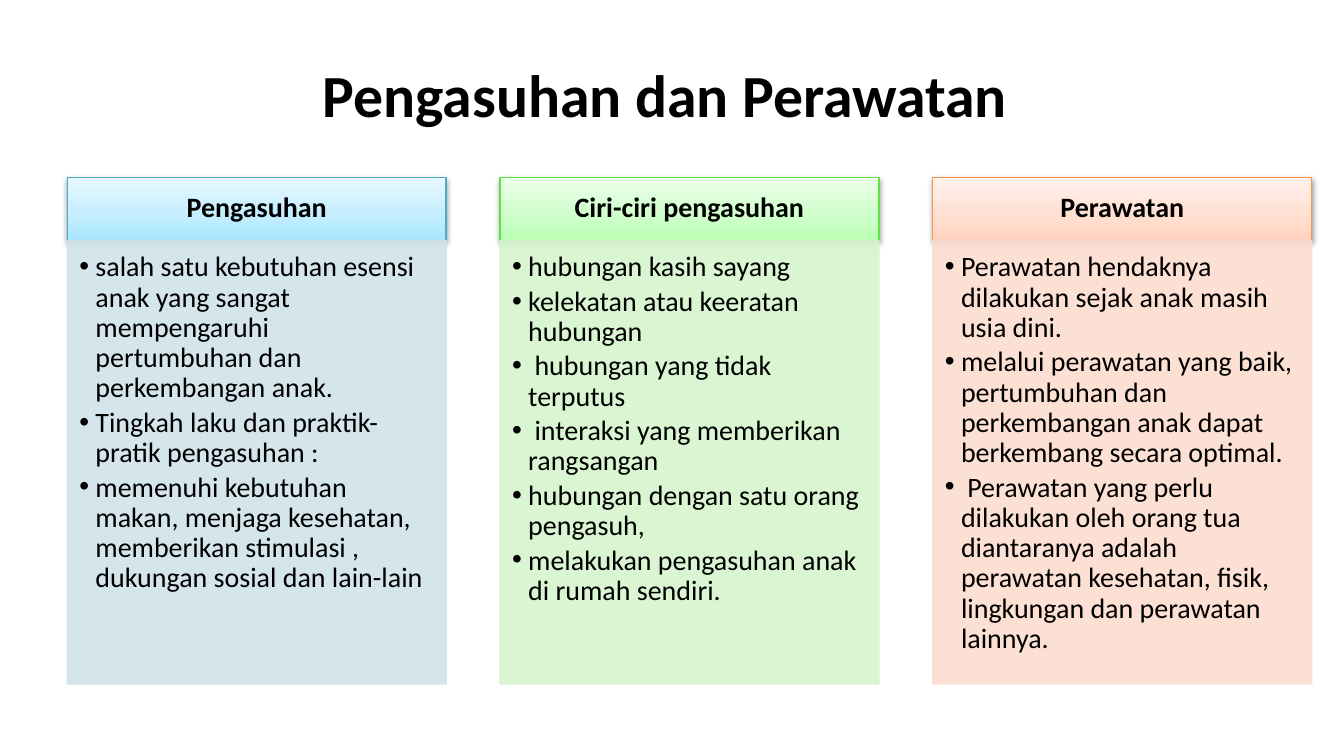
from copy import deepcopy

from lxml.etree import SubElement
from pptx import Presentation
from pptx.dml.color import RGBColor
from pptx.enum.shapes import MSO_SHAPE
from pptx.enum.text import MSO_ANCHOR, PP_ALIGN
from pptx.oxml.ns import qn
from pptx.util import Inches, Pt

BLACK = RGBColor(0x00, 0x00, 0x00)
BLUE_LINE = RGBColor(0x4B, 0xAC, 0xC6)
BLUE_BODY = RGBColor(0xD0, 0xE3, 0xEA)
BLUE_STOPS = [RGBColor(0xA7, 0xE6, 0xFF), RGBColor(0xC1, 0xED, 0xFF), RGBColor(0xE7, 0xF8, 0xFF)]
GREEN_LINE = RGBColor(0x60, 0xE1, 0x46)
GREEN_BODY = RGBColor(0xD6, 0xF4, 0xCE)
GREEN_STOPS = [RGBColor(0xB9, 0xFF, 0xB2), RGBColor(0xCD, 0xFF, 0xC9), RGBColor(0xEC, 0xFF, 0xEA)]
ORANGE_LINE = RGBColor(0xF7, 0x96, 0x46)
ORANGE_BODY = RGBColor(0xFC, 0xDD, 0xCF)
ORANGE_STOPS = [RGBColor(0xFF, 0xD2, 0xBD), RGBColor(0xFF, 0xDE, 0xD0), RGBColor(0xFF, 0xF2, 0xED)]

COLUMNS = [
    ("Pengasuhan", BLUE_LINE, BLUE_BODY, BLUE_STOPS, [
        "salah satu kebutuhan esensi anak yang sangat mempengaruhi pertumbuhan dan perkembangan anak.",
        "Tingkah laku dan praktik-pratik pengasuhan :",
        "memenuhi kebutuhan makan, menjaga kesehatan,  memberikan stimulasi , "
        "dukungan sosial dan lain-lain",
    ]),
    ("Ciri-ciri pengasuhan", GREEN_LINE, GREEN_BODY, GREEN_STOPS, [
        "hubungan kasih sayang",
        "kelekatan atau keeratan hubungan",
        " hubungan yang tidak terputus",
        " interaksi yang memberikan rangsangan",
        "hubungan dengan satu orang pengasuh,",
        "melakukan pengasuhan anak di rumah sendiri.",
    ]),
    ("Perawatan", ORANGE_LINE, ORANGE_BODY, ORANGE_STOPS, [
        "Perawatan hendaknya dilakukan sejak anak masih usia dini.",
        "melalui perawatan yang baik, pertumbuhan dan perkembangan anak dapat "
        "berkembang secara optimal.",
        " Perawatan yang perlu dilakukan oleh orang tua diantaranya adalah "
        "perawatan kesehatan, fisik, lingkungan dan perawatan lainnya.",
    ]),
]
STOP_POSITIONS = [0, 0.35, 1]
LEFT, PITCH, WIDTH = 0.5, 3.22, 2.82
HEADER_TOP, HEADER_HEIGHT, BODY_HEIGHT = 1.32, 0.47, 3.3


def add_panel(left, top, height, line_color, anchor, insets):
    panel = slide.shapes.add_shape(
        MSO_SHAPE.RECTANGLE, Inches(left), Inches(top), Inches(WIDTH), Inches(height))
    panel.shadow.inherit = False
    panel.line.color.rgb = line_color
    panel.line.width = Pt(0.75)
    frame = panel.text_frame
    frame.word_wrap = True
    frame.vertical_anchor = anchor
    frame.margin_left, frame.margin_top, frame.margin_right, frame.margin_bottom = map(Inches, insets)
    return panel


def add_text(paragraph, text, size, bold, align):
    paragraph.alignment = align
    run = paragraph.add_run()
    run.text = text
    run.font.name = "Calibri"
    run.font.size = Pt(size)
    run.font.bold = bold
    run.font.color.rgb = BLACK


prs = Presentation()
prs.slide_width = Inches(10)
prs.slide_height = Inches(10 * 9 / 16)
slide = prs.slides.add_slide(prs.slide_layouts[6])

title = slide.shapes.add_textbox(Inches(0.5), Inches(0.23), Inches(9), Inches(0.94)).text_frame
title.word_wrap = True
title.vertical_anchor = MSO_ANCHOR.MIDDLE
add_text(title.paragraphs[0], "Pengasuhan dan Perawatan ", 32, True, PP_ALIGN.CENTER)

for column, (heading, line_color, body_color, stop_colors, points) in enumerate(COLUMNS):
    left = LEFT + column * PITCH

    header = add_panel(left, HEADER_TOP, HEADER_HEIGHT, line_color,
                       MSO_ANCHOR.MIDDLE, (0.12, 0.07, 0.12, 0.07))
    header.fill.gradient()
    header.fill.gradient_angle = 90
    stop_list = header._element.spPr.find(qn("a:gradFill")).find(qn("a:gsLst"))
    stop_list.append(deepcopy(stop_list[-1]))
    for stop, position, color in zip(header.fill.gradient_stops, STOP_POSITIONS, stop_colors):
        stop.position = position
        stop.color.rgb = color
    shadow = SubElement(header._element.spPr.find(qn("a:effectLst")), qn("a:outerShdw"),
                        blurRad="40000", dist="20000", dir="5400000", rotWithShape="0")
    shadow_color = SubElement(shadow, qn("a:srgbClr"), val="000000")
    SubElement(shadow_color, qn("a:alpha"), val="38000")
    heading_line = header.text_frame.paragraphs[0]
    heading_line.line_spacing = 0.9
    add_text(heading_line, heading, 15, True, PP_ALIGN.CENTER)

    body = add_panel(left, HEADER_TOP + HEADER_HEIGHT, BODY_HEIGHT, body_color,
                     MSO_ANCHOR.TOP, (0.09, 0.09, 0.12, 0.13))
    body.fill.solid()
    body.fill.fore_color.rgb = body_color
    for color in body._element.spPr.iter(qn("a:srgbClr")):
        SubElement(color, qn("a:alpha"), val="90000")
    for index, point in enumerate(points):
        frame = body.text_frame
        paragraph = frame.add_paragraph() if index else frame.paragraphs[0]
        paragraph.line_spacing = 0.9
        paragraph.space_after = Pt(2.25)
        properties = paragraph._p.get_or_add_pPr()
        properties.set("marL", str(Inches(0.12)))
        properties.set("indent", str(-Inches(0.12)))
        SubElement(properties, qn("a:buFont"), typeface="Arial")
        SubElement(properties, qn("a:buChar"), char="•")
        add_text(paragraph, point, 15, False, PP_ALIGN.LEFT)

prs.save("out.pptx")
